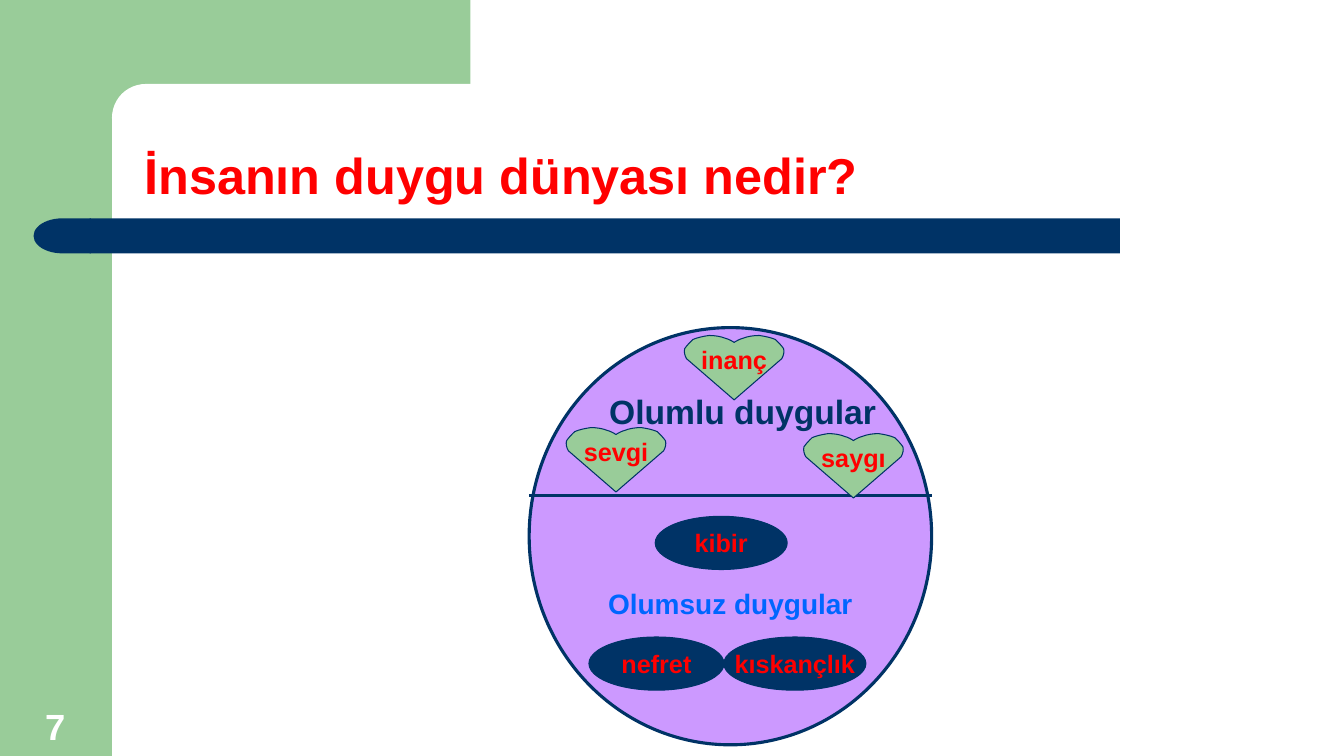
from lxml import etree
from pptx import Presentation
from pptx.dml.color import RGBColor
from pptx.enum.shapes import MSO_CONNECTOR, MSO_SHAPE
from pptx.enum.text import MSO_ANCHOR, MSO_AUTO_SIZE, PP_ALIGN
from pptx.oxml.ns import qn
from pptx.util import Pt

GREEN = RGBColor(0x99, 0xCC, 0x99)
NAVY = RGBColor(0x00, 0x33, 0x66)
PURPLE = RGBColor(0xCC, 0x99, 0xFF)
RED = RGBColor(0xFF, 0x00, 0x00)
BLUE = RGBColor(0x00, 0x66, 0xFF)
WHITE = RGBColor(0xFF, 0xFF, 0xFF)

RECTANGLE = MSO_SHAPE.RECTANGLE
ROUNDED = MSO_SHAPE.ROUNDED_RECTANGLE
DELAY = MSO_SHAPE.FLOWCHART_DELAY
OVAL = MSO_SHAPE.OVAL
JUNCTION = MSO_SHAPE.FLOWCHART_SUMMING_JUNCTION
STRAIGHT = MSO_CONNECTOR.STRAIGHT
LEFT, CENTER = PP_ALIGN.LEFT, PP_ALIGN.CENTER
TOP, MIDDLE, BOTTOM = MSO_ANCHOR.TOP, MSO_ANCHOR.MIDDLE, MSO_ANCHOR.BOTTOM
NO_AUTOFIT = MSO_AUTO_SIZE.NONE


def paint(shape, fill, line=None, weight=0.75):
    shape.shadow.inherit = False
    shape.fill.solid()
    shape.fill.fore_color.rgb = fill
    if line is None:
        shape.line.fill.background()
    else:
        shape.line.color.rgb = line
        shape.line.width = Pt(weight)


def write(shape, text, size, color, anchor=MIDDLE, align=CENTER, wrap=False):
    frame = shape.text_frame
    frame.auto_size = NO_AUTOFIT
    frame.word_wrap = wrap
    frame.vertical_anchor = anchor
    paragraph = frame.paragraphs[0]
    paragraph.alignment = align
    run = paragraph.add_run()
    run.text = text
    run.font.name = "Arial"
    run.font.size = Pt(size)
    run.font.bold = True
    run.font.color.rgb = color
    return paragraph


deck = Presentation()
deck.slide_width, deck.slide_height = Pt(960), Pt(540)
slide = deck.slides.add_slide(deck.slide_layouts[5])
shapes = slide.shapes

for kind, left, top, width, height, color, rounding in [
    (RECTANGLE, 0, 0, 80, 540, GREEN, None),
    (RECTANGLE, 72, 0, 264, 84, GREEN, None),
    (ROUNDED, 80, 60, 536, 48, WHITE, 0.5),
    (ROUNDED, 64, 156, 736, 25, NAVY, 0),
    (DELAY, 24, 156, 41, 25, NAVY, None),
]:
    panel = shapes.add_shape(kind, Pt(left), Pt(top), Pt(width), Pt(height))
    paint(panel, color)
    if rounding is not None:
        panel.adjustments[0] = rounding
    if kind == DELAY:
        panel.element.spPr.find(qn("a:xfrm")).set("flipH", "1")

page_number = shapes.add_textbox(Pt(8.5), Pt(500), Pt(62), Pt(38))
write(page_number, "7", 26, WHITE, BOTTOM)

title = shapes.title
title.left, title.top, title.width, title.height = Pt(96), Pt(60), Pt(840), Pt(90)
write(title, "İnsanın duygu dünyası nedir?", 36, RED, BOTTOM, LEFT, True).line_spacing = 0.9
title.element.getparent().append(title.element)

emotion_world = shapes.add_shape(OVAL, Pt(378), Pt(234), Pt(287.5), Pt(298))
paint(emotion_world, PURPLE, NAVY, 2.25)
write(emotion_world, "Olumsuz duygular", 20, BLUE)
emotion_world.text_frame.margin_top = Pt(100)

divider = shapes.add_connector(STRAIGHT, Pt(378), Pt(354), Pt(665.5), Pt(354))
divider.line.color.rgb = NAVY
divider.line.width = Pt(2.25)
etree.SubElement(divider.element.spPr, qn("a:effectLst"))

NOTCH = (0, 5)
TIP = (0, 46)
RIGHT_LOBE = [
    [(0.7, 4.3), (5, 2.2), (5.8, 2.2)],
    [(9.4, 0.7), (13.7, 0), (18, 0)],
    [(22.3, 0.7), (26, 1.4), (29.5, 2.9)],
    [(31.7, 5), (33.8, 7.2), (35.3, 9.4)],
    [(36, 11.5), (35.3, 14.4), (34, 16.6)],
]
mirrored = [(-x, y) for x, y in reversed([NOTCH] + sum(RIGHT_LOBE, []))]
left_lobe = [mirrored[i:i + 3] for i in range(1, len(mirrored), 3)]
heart_segments = RIGHT_LOBE + [[TIP], mirrored[:1]] + left_lobe

for feeling, axis_x, top in [("sevgi", 440, 305.4), ("saygı", 609.6, 309.7), ("inanç", 524.4, 239.6)]:
    placed = [[(Pt(axis_x + x), Pt(top + y)) for x, y in segment] for segment in heart_segments]
    builder = shapes.build_freeform(*placed[-1][-1])
    builder.add_line_segments([segment[-1] for segment in placed], close=True)
    heart = builder.convert_to_shape()
    for straight, segment in zip(list(heart.element.iter(qn("a:lnTo"))), placed):
        if len(segment) == 3:
            curve = etree.Element(qn("a:cubicBezTo"))
            for x, y in segment:
                etree.SubElement(curve, qn("a:pt"), x=str(x - heart.left), y=str(y - heart.top))
            straight.getparent().replace(straight, curve)
    paint(heart, GREEN, NAVY)
    write(heart, feeling, 18, RED)
    heart.text_frame.margin_bottom = Pt(15)

for feeling, left, top, width in [
    ("nefret", 420.7, 455, 96.5),
    ("kıskançlık", 517, 455, 101.5),
    ("kibir", 468, 368.8, 94.3),
]:
    oval = shapes.add_shape(JUNCTION, Pt(left), Pt(top), Pt(width), Pt(38))
    paint(oval, NAVY, NAVY)
    write(oval, feeling, 18, RED)

positive_label = shapes.add_textbox(Pt(427.2), Pt(276), Pt(206.6), Pt(36))
write(positive_label, "Olumlu duygular", 24, NAVY, TOP)

deck.save("out.pptx")
